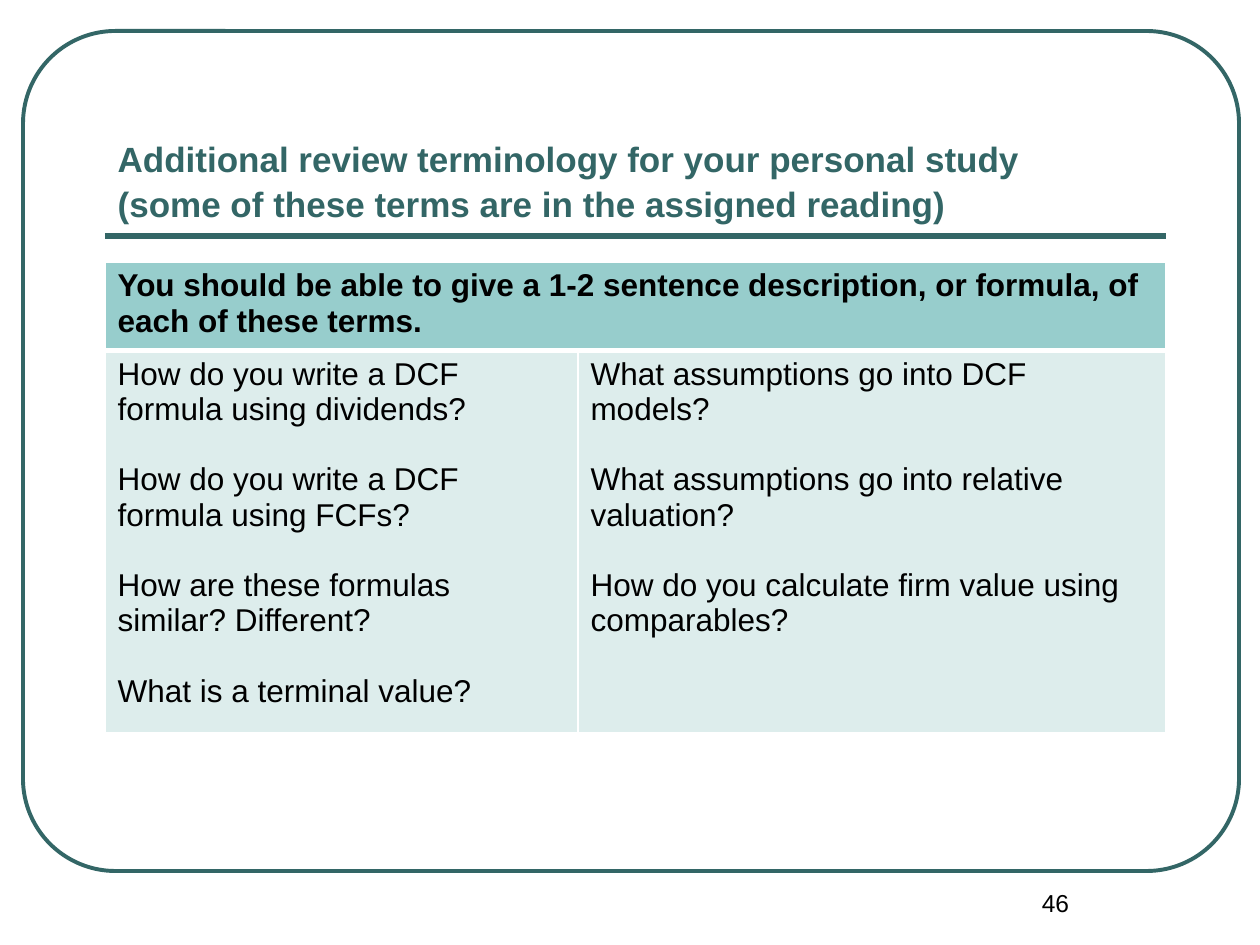
from lxml.etree import SubElement
from pptx import Presentation
from pptx.dml.color import RGBColor
from pptx.enum.shapes import MSO_CONNECTOR, MSO_SHAPE
from pptx.enum.text import MSO_ANCHOR, MSO_AUTO_SIZE, PP_ALIGN
from pptx.oxml.ns import qn
from pptx.util import Emu, Pt

PX = 914400 // 126  # one px in EMU
TEAL, BLACK, WHITE = "336666", "000000", "FFFFFF"


def color(target, value):
    target.rgb = RGBColor.from_string(value)


def add_run(p, text, size, value=BLACK, bold=False):
    r = p.add_run()
    r.text = text
    r.font.name, r.font.size, r.font.bold = "Arial", Pt(size), bold
    color(r.font.color, value)


prs = Presentation()
prs.slide_width, prs.slide_height = Emu(1260 * PX), Emu(945 * PX)
s = prs.slides.add_slide(prs.slide_layouts[5])

# Rounded frame
frame = s.shapes.add_shape(MSO_SHAPE.ROUNDED_RECTANGLE,
                           23 * PX, 31 * PX, 1216 * PX, 840 * PX)
frame.adjustments[0] = 0.11
frame.shadow.inherit = False
frame.fill.background()
color(frame.line.color, TEAL)
frame.line.width = Pt(2.25)

# Rule under the title
rule = s.shapes.add_connector(MSO_CONNECTOR.STRAIGHT,
                              105 * PX, 236 * PX, 1166 * PX, 236 * PX)
color(rule.line.color, TEAL)
rule.line.width = Pt(3)
SubElement(rule._element.spPr, qn("a:effectLst"))

# Title
title = s.shapes.title
title.left, title.top = 105 * PX, 73 * PX
title.width, title.height = 1061 * PX, 158 * PX
tf = title.text_frame
tf.auto_size = MSO_AUTO_SIZE.NONE
tf.vertical_anchor = MSO_ANCHOR.BOTTOM
p = tf.paragraphs[0]
p.alignment = PP_ALIGN.LEFT
p.line_spacing = 1.07
add_run(p, "Additional review terminology for your personal study", 20, TEAL, True)
p.add_line_break()
add_run(p, "(some of these terms are in the assigned reading)", 20, TEAL, True)

# Slide number
tf = s.shapes.add_textbox(945 * PX, 882 * PX, 221 * PX, 63 * PX).text_frame
tf.word_wrap = True
p = tf.paragraphs[0]
p.alignment = PP_ALIGN.CENTER
add_run(p, "46", 14)

# Review table
header = ("You should be able to give a 1-2 sentence description, "
          "or formula, of each of these terms.")
questions = [
    ["How do you write a DCF formula using dividends?",
     "How do you write a DCF formula using FCFs?",
     "How are these formulas similar? Different?",
     "What is a terminal value?"],
    ["What assumptions go into DCF models?",
     "What assumptions go into relative valuation?",
     "How do you calculate firm value using comparables?"],
]
table = s.shapes.add_table(2, 2, 105 * PX, 262 * PX, 1061 * PX, 448 * PX).table
table.first_row = table.horz_banding = False
for col, width in zip(table.columns, (473, 588)):
    col.width = width * PX
for row, height in zip(table.rows, (83, 365)):
    row.height = height * PX
table.cell(0, 0).merge(table.cell(0, 1))

add_run(table.cell(0, 0).text_frame.paragraphs[0], header, 18, bold=True)
for c, column in enumerate(questions):
    tf = table.cell(1, c).text_frame
    for i, question in enumerate(column):
        p = tf.add_paragraph() if i else tf.paragraphs[0]
        if i:
            p.space_before = Pt(20.1)  # one line of text
        add_run(p, question, 18)

# Cell fills and white borders, heavier between the two rows
for r, fill in enumerate(("97CDCC", "DDEDEC")):
    for c in range(2):
        cell = table.cell(r, c)
        tcPr = cell._tc.get_or_add_tcPr()
        for side in "LRTB":
            heavy = (r, side) in ((0, "B"), (1, "T"))
            ln = SubElement(tcPr, qn(f"a:ln{side}"), w=str(Pt(3 if heavy else 1)))
            SubElement(SubElement(ln, qn("a:solidFill")), qn("a:srgbClr"), val=WHITE)
        cell.fill.solid()
        color(cell.fill.fore_color, fill)

prs.save("out.pptx")
